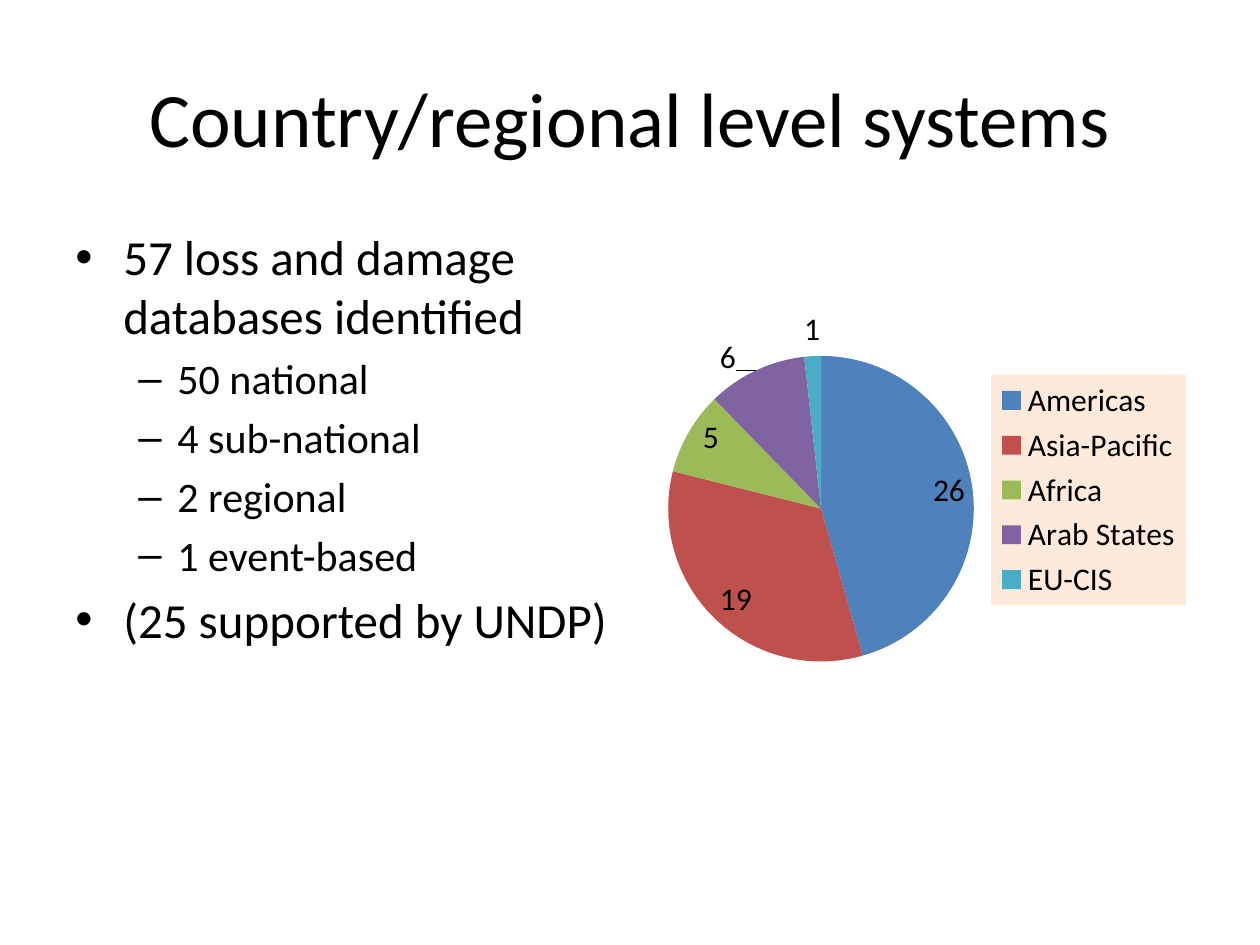
from lxml import etree
from pptx import Presentation
from pptx.chart.data import CategoryChartData
from pptx.dml.color import RGBColor
from pptx.enum import chart as charts, text
from pptx.oxml import ns, parse_xml
from pptx.util import Inches, Pt

# Content
FONT = "Calibri"
TITLE = "Country/regional level systems"
BULLETS = [
    (0, "57 loss and damage databases identified"),
    (1, "50 national"),
    (1, "4 sub-national"),
    (1, "2 regional"),
    (1, "1 event-based"),
    (0, "(25 supported by UNDP)"),
]
# level: bullet, size, left margin, hanging indent
LEVELS = {0: ("•", 28, 0.38, -0.38), 1: ("–", 24, 0.81, -0.31)}
REGIONS = [
    ("Americas", 26, "4F81BD"),
    ("Asia-Pacific", 19, "C0504D"),
    ("Africa", 5, "9BBB59"),
    ("Arab States", 6, "8064A2"),
    ("EU-CIS", 1, "4BACC6"),
]
ARAB_STATES = 3


def color(value):
    return RGBColor.from_string(value)


def set_font(font, size):
    font.name, font.size = FONT, Pt(size)
    font.color.rgb = color("000000")


def place(shape, left, top, width, height):
    shape.left, shape.top = Inches(left), Inches(top)
    shape.width, shape.height = Inches(width), Inches(height)


def manual_layout(inner=False, edge=True, **fractions):
    parts = '<c:layoutTarget val="inner"/>' if inner else ""
    if edge:
        parts += '<c:xMode val="edge"/><c:yMode val="edge"/>'
    parts += "".join(f'<c:{key} val="{value}"/>' for key, value in fractions.items())
    return parse_xml(f"<c:layout {ns.nsdecls('c')}><c:manualLayout>{parts}"
                     "</c:manualLayout></c:layout>")


def set_layout(parent, layout, index):
    for old in parent.findall(ns.qn("c:layout")):
        parent.remove(old)
    parent.insert(index, layout)


deck = Presentation()
deck.slide_width, deck.slide_height = Inches(10), Inches(7.5)
page = deck.slides.add_slide(deck.slide_layouts[5])

# Title
title = page.shapes.title
place(title, 0.5, 0.3, 9, 1.25)
title.text_frame.text = TITLE
title.text_frame.vertical_anchor = text.MSO_ANCHOR.MIDDLE
para = title.text_frame.paragraphs[0]
para.alignment = text.PP_ALIGN.CENTER
set_font(para.font, 44)

# Bulleted list
box = page.shapes.add_textbox(Inches(0.5), Inches(1.75), Inches(4.58), Inches(4.95))
frame = box.text_frame
frame.word_wrap = True
for number, (level, words) in enumerate(BULLETS):
    para = frame.add_paragraph() if number else frame.paragraphs[0]
    bullet, size, margin, indent = LEVELS[level]
    para.text, para.level = words, level
    para.space_before = Pt(size * 0.2)
    set_font(para.font, size)
    props = para._p.get_or_add_pPr()
    props.set("marL", str(Inches(margin)))
    props.set("indent", str(Inches(indent)))
    etree.SubElement(props, ns.qn("a:buFont")).set("typeface", "Arial")
    etree.SubElement(props, ns.qn("a:buChar")).set("char", bullet)
    # Bullets belong before the default run properties
    props.append(props.find(ns.qn("a:defRPr"))) if props.find(ns.qn("a:defRPr")) is not None else None

# Pie chart
data = CategoryChartData()
data.categories = [name for name, _, _ in REGIONS]
data.add_series("Series 1", [count for _, count, _ in REGIONS])
chart = page.shapes.add_chart(charts.XL_CHART_TYPE.PIE, Inches(5.08), Inches(1.39),
                              Inches(4.42), Inches(4.95), data).chart
chart.has_title = False
set_font(chart.font, 18)
chart.plots[0].vary_by_categories = True
series = chart.plots[0].series[0]
for number, (_, _, fill) in enumerate(REGIONS):
    wedge = series.points[number].format.fill
    wedge.solid()
    wedge.fore_color.rgb = color(fill)
plot_area = chart._chartSpace.chart.plotArea
set_layout(plot_area, manual_layout(inner=True, x=0.05, y=0.29, w=0.55, h=0.49), 0)

# Value labels, with one moved out to a leader line
labels = series.data_labels
labels.show_value = True
labels.position = charts.XL_LABEL_POSITION.BEST_FIT
series.points[ARAB_STATES].data_label.position = charts.XL_LABEL_POSITION.BEST_FIT
moved = labels._element.find(ns.qn("c:dLbl"))
set_layout(moved, manual_layout(edge=False, x=-0.03, y=0.02), 1)

# Legend
chart.has_legend = True
legend = chart.legend
legend.position = charts.XL_LEGEND_POSITION.RIGHT
legend.include_in_layout = False
set_font(legend.font, 18)
set_layout(legend._element, manual_layout(x=0.63, y=0.32, w=0.35, h=0.37), 1)
backdrop = parse_xml(f"<c:spPr {ns.nsdecls('c', 'a')}><a:solidFill>"
                     '<a:srgbClr val="FDEADA"/></a:solidFill></c:spPr>')
legend._element.find(ns.qn("c:txPr")).addprevious(backdrop)

deck.save("out.pptx")
